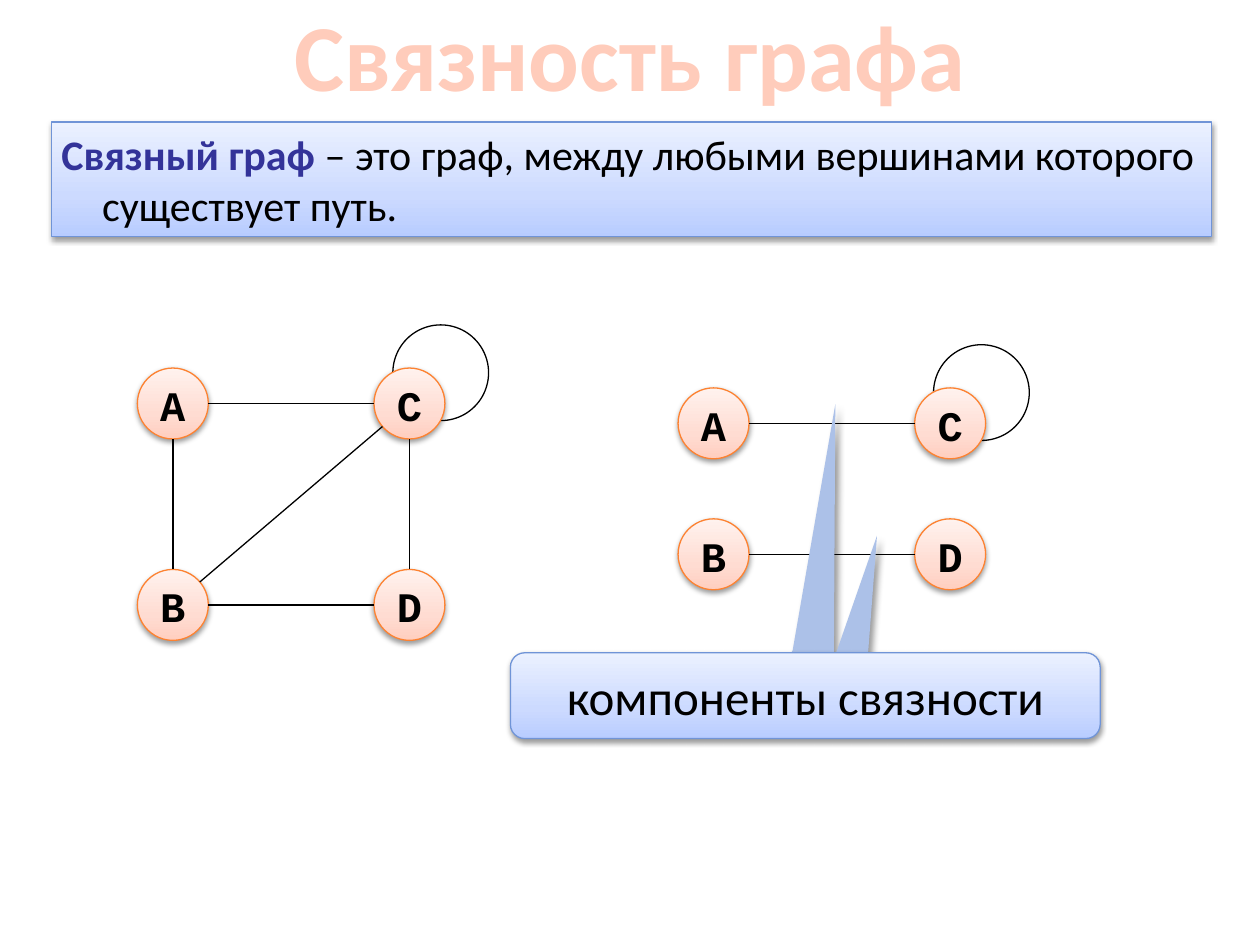
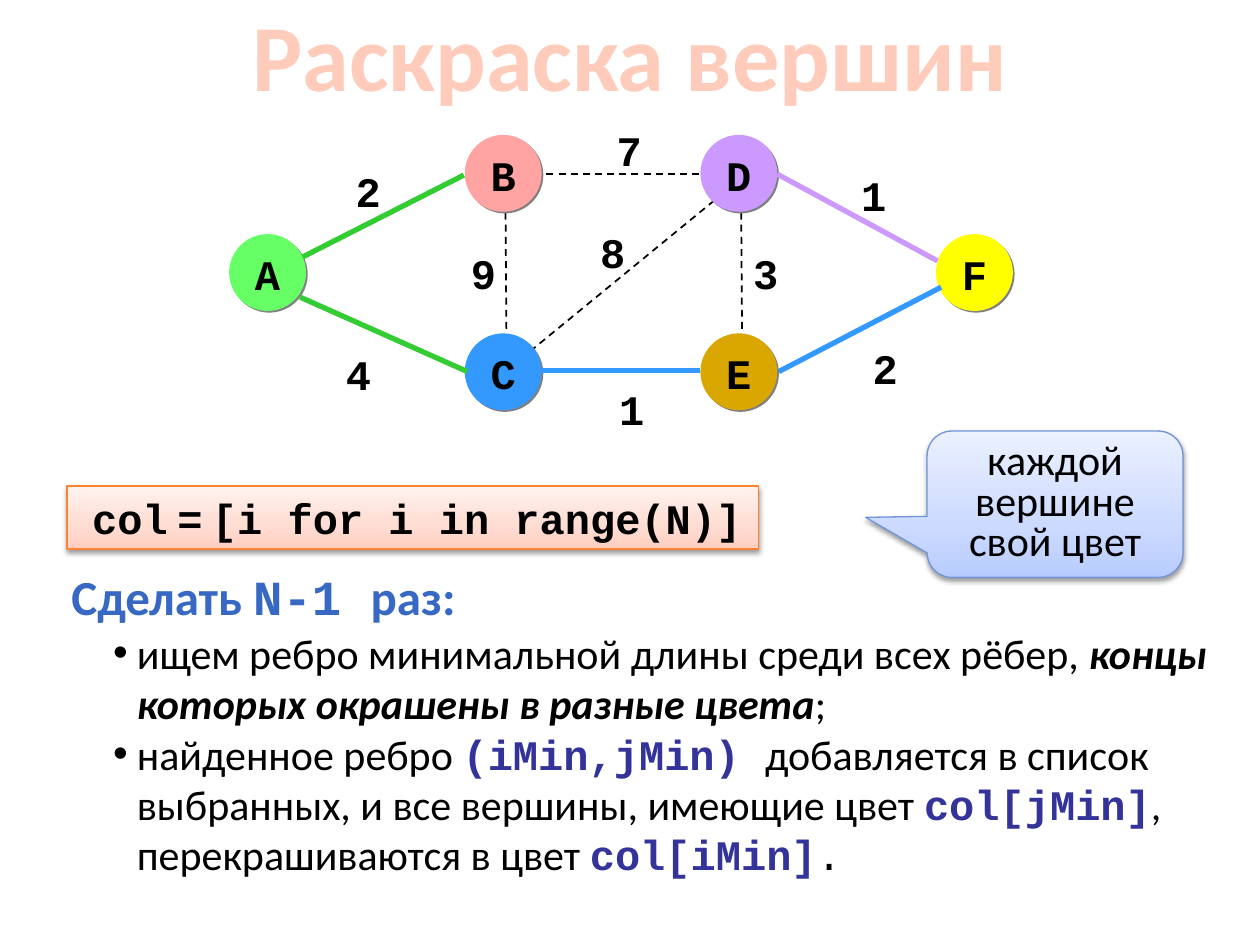
from copy import deepcopy
from math import hypot

from lxml import etree
from pptx import Presentation
from pptx.dml.color import RGBColor
from pptx.enum.dml import MSO_LINE
from pptx.enum.shapes import MSO_CONNECTOR, MSO_SHAPE
from pptx.enum.text import MSO_ANCHOR, PP_ALIGN
from pptx.oxml.ns import qn
from pptx.util import Cm, Pt

OVAL = MSO_SHAPE.OVAL
STRAIGHT = MSO_CONNECTOR.STRAIGHT
LEFT, CENTER = PP_ALIGN.LEFT, PP_ALIGN.CENTER
MIDDLE = MSO_ANCHOR.MIDDLE
DASH = MSO_LINE.DASH

COLORS = {
    "title": "FFCCBB", "black": "000000", "term": "333399", "heading": "3668C4",
    "orange": "FD8231", "blue": "7094D7", "pointer": "ACC1E8", "grey": "808080",
    "green": "33CC33", "violet": "CC99FF", "azure": "3399FF",
    "A": "66FF66", "B": "FFA3A3", "C": "3399FF",
    "D": "CC99FF", "E": "DAA600", "F": "FFFF00",
}
PEACH = ["FFCEBF", "FFDCD2", "FFF2EE"]
SKY = ["B8CCFF", "CCDAFF", "EBF1FF"]
SOFT = ("black", 38, 3.1, 1.6, 90)
POINTER_SHADOW = ("black", 40, 4, 3, 45)
HARD = ("grey", 100, 0, 1.4, 45)
SANS, MONO = "Calibri", "Courier New"


def decorate(item, fill=None, line=None, width=0.75, shadow=None):
    if isinstance(fill, list):
        item.fill.gradient()
        item.fill.gradient_angle = 90
        stops = item.element.spPr.find(".//" + qn("a:gsLst"))
        stops.insert(1, deepcopy(stops[0]))
        for stop, position, color in zip(item.fill.gradient_stops, (0, 0.35, 1), fill):
            stop.position = position
            stop.color.rgb = RGBColor.from_string(color)
    elif fill:
        item.fill.solid()
        item.fill.fore_color.rgb = RGBColor.from_string(COLORS[fill])
    elif hasattr(item, "fill"):
        item.fill.background()
    if line:
        item.line.color.rgb = RGBColor.from_string(COLORS[line])
        item.line.width = Pt(width)
    else:
        item.line.fill.background()
    effects = etree.SubElement(item.element.spPr, qn("a:effectLst"))
    if shadow:
        color, opacity, blur, distance, angle = shadow
        outer = etree.SubElement(
            effects, qn("a:outerShdw"), blurRad=str(Pt(blur)), dist=str(Pt(distance)),
            dir=str(angle * 60000), rotWithShape="0")
        tone = etree.SubElement(outer, qn("a:srgbClr"), val=COLORS[color])
        etree.SubElement(tone, qn("a:alpha"), val=str(opacity * 1000))


def write(paragraph, pieces, size, align=CENTER):
    paragraph.alignment = align
    for text, font, color, bold, italic in pieces:
        run = paragraph.add_run()
        run.text = text
        run.font.name = font
        run.font.size = Pt(size)
        run.font.bold = bold
        run.font.italic = italic
        run.font.color.rgb = RGBColor.from_string(COLORS[color])


deck = Presentation()
deck.slide_width, deck.slide_height = Cm(25.4), Cm(19.05)
slides = []
for heading in ("Связность графа", "Раскраска вершин"):
    slide = deck.slides.add_slide(deck.slide_layouts[6])
    title = slide.shapes.add_textbox(0, 0, Cm(25.4), Cm(2.16)).text_frame
    title.word_wrap = True
    title.vertical_anchor = MIDDLE
    write(title.paragraphs[0], [(heading, SANS, "title", True, False)], 54)
    slides.append(slide)
connectivity, coloring = (slide.shapes for slide in slides)

NODE, COLUMN_STEP = 1.43, 4.77
graphs = [
    (2.77, 7.42, 4.06, ["BD", "AB", "AC", "CD", "BC"]),
    (13.67, 7.82, 2.64, ["BD", "AC"]),
]
for left, top, row_step, edges in graphs:
    self_loop = connectivity.add_shape(
        OVAL, Cm(left + COLUMN_STEP + 0.38), Cm(top - 0.87), Cm(1.93), Cm(1.93))
    decorate(self_loop, line="black")
    centers = {}
    for index, letter in enumerate("ABCD"):
        x = left + index // 2 * COLUMN_STEP
        y = top + index % 2 * row_step
        centers[letter] = (x + NODE / 2, y + NODE / 2)
        vertex = connectivity.add_shape(OVAL, Cm(x), Cm(y), Cm(NODE), Cm(NODE))
        decorate(vertex, PEACH, "orange", shadow=SOFT)
        label = vertex.text_frame
        label.margin_left = label.margin_right = label.margin_bottom = 0
        label.margin_top = Cm(0.05)
        write(label.paragraphs[0], [(letter, MONO, "black", True, False)], 24)
    for start, end in edges:
        (x1, y1), (x2, y2) = centers[start], centers[end]
        share = NODE / 2 / hypot(x2 - x1, y2 - y1)
        dx, dy = (x2 - x1) * share, (y2 - y1) * share
        edge = connectivity.add_connector(
            STRAIGHT, Cm(x1 + dx), Cm(y1 + dy), Cm(x2 - dx), Cm(y2 - dy))
        decorate(edge, line="black")

pointers = [
    [(15.82, 13.41), (15.98, 13.11), (16.84, 8.15), (16.81, 13.41), (16.21, 13.51)],
    [(16.76, 13.44), (17.68, 10.8), (17.48, 13.44), (16.92, 13.46)],
]
for outline in pointers:
    points = [(Cm(x), Cm(y)) for x, y in outline]
    builder = connectivity.build_freeform(*points[0])
    builder.add_line_segments(points[1:])
    decorate(builder.convert_to_shape(), "pointer", shadow=POINTER_SHADOW)

components = connectivity.add_shape(
    MSO_SHAPE.ROUNDED_RECTANGLE, Cm(10.29), Cm(13.16), Cm(11.89), Cm(1.73))
decorate(components, SKY, "blue", shadow=SOFT)
write(components.text_frame.paragraphs[0],
      [("компоненты связности", SANS, "black", False, False)], 28)

definition = connectivity.add_shape(
    MSO_SHAPE.RECTANGLE, Cm(1.04), Cm(2.46), Cm(23.39), Cm(2.31))
decorate(definition, SKY, "blue", shadow=SOFT)
wording = definition.text_frame
wording.margin_left = wording.margin_right = 0
write(wording.paragraphs[0], [
    ("Связный граф ", SANS, "term", True, False),
    ("– это граф, между любыми вершинами которого существует путь.",
     SANS, "black", False, False),
], 24, LEFT)
properties = wording.paragraphs[0]._p.get_or_add_pPr()
properties.set("marL", str(Cm(1.02)))
properties.set("indent", str(Cm(-0.82)))

dashed_edges = [
    (10.77, 3.51, 14.4, 3.51), (14.94, 4.04, 14.96, 6.93),
    (10.31, 7.39, 14.4, 4.04), (10.19, 4.04, 10.21, 6.93),
]
for ends in dashed_edges:
    edge = coloring.add_connector(STRAIGHT, *map(Cm, ends))
    decorate(edge, line="black", width=1)
    edge.line.dash_style = DASH

weights = [
    ("4", 6.4, 6.76), ("2", 6.6, 3.07), ("1", 11.91, 7.47), ("2", 17.02, 6.63),
    ("9", 8.92, 4.72), ("7", 11.86, 2.24), ("8", 11.53, 4.29), ("1", 16.79, 3.15),
    ("3", 14.61, 4.72),
]
circles = [(weight, x, y, 1.65, None, None, 0) for weight, x, y in weights]
grid = [("A", 0, 1), ("B", 1, 0), ("C", 1, 2), ("D", 2, 0), ("E", 2, 2), ("F", 3, 1)]
circles += [(letter, 4.62 + 4.75 * column, 2.72 + 2 * row, 1.55, letter, HARD, 0.05)
            for letter, column, row in grid]
for text, x, y, width, fill, shadow, inset in circles:
    circle = coloring.add_shape(OVAL, Cm(x), Cm(y), Cm(width), Cm(1.55))
    decorate(circle, fill, shadow=shadow)
    label = circle.text_frame
    label.margin_left = label.margin_right = label.margin_bottom = 0
    label.margin_top = Cm(inset)
    write(label.paragraphs[0], [(text, MONO, "black", True, False)], 24)

chosen_edges = [
    ("azure", (10.92, 7.47, 14.12, 7.47)), ("violet", (15.67, 3.51, 18.9, 5.26)),
    ("green", (6.1, 5.18, 9.35, 3.53)), ("azure", (15.7, 7.49, 18.97, 5.79)),
    ("green", (6.05, 5.99, 9.42, 7.49)),
]
for color, ends in chosen_edges:
    edge = coloring.add_connector(STRAIGHT, *map(Cm, ends))
    decorate(edge, line=color, width=3)

steps = coloring.add_textbox(Cm(2.03), Cm(12.52), Cm(22.78), Cm(5.38)).text_frame
steps.word_wrap = True
step_pieces = [
    [("ищем ребро минимальной длины среди всех рёбер, ", SANS, "black", False, False),
     ("концы которых окрашены в разные цвета", SANS, "black", True, True),
     (";", SANS, "black", False, False)],
    [("найденное ребро ", SANS, "black", False, False),
     ("(iMin,jMin) ", MONO, "term", True, False),
     ("добавляется в список выбранных, и все вершины, имеющие цвет ",
      SANS, "black", False, False),
     ("col[jMin]", MONO, "term", True, False),
     (", перекрашиваются в цвет ", SANS, "black", False, False),
     ("col[iMin]", MONO, "term", True, False),
     (".", MONO, "black", False, False)],
]
for number, pieces in enumerate(step_pieces):
    step = steps.add_paragraph() if number else steps.paragraphs[0]
    write(step, pieces, 24, LEFT)
    properties = step._p.get_or_add_pPr()
    properties.set("marL", str(Cm(0.48)))
    properties.set("indent", str(Cm(-0.48)))
    etree.SubElement(properties, qn("a:buFont"), typeface="Arial")
    etree.SubElement(properties, qn("a:buChar"), char="•")

repeat = coloring.add_textbox(Cm(1.19), Cm(11.3), Cm(10), Cm(1.45)).text_frame
repeat.word_wrap = True
write(repeat.paragraphs[0], [
    ("Сделать ", SANS, "heading", True, False),
    ("N-1 ", MONO, "heading", True, False),
    ("раз:", SANS, "heading", True, False),
], 28, LEFT)

code = coloring.add_shape(MSO_SHAPE.RECTANGLE, Cm(1.35), Cm(9.8), Cm(13.94), Cm(1.27))
decorate(code, PEACH, "orange", shadow=SOFT)
code.text_frame.margin_left = Cm(0.51)
code.text_frame.margin_right = 0
write(code.text_frame.paragraphs[0], [
    ("col", MONO, "black", True, False), (" ", SANS, "black", True, False),
    ("=", MONO, "black", True, False), (" ", SANS, "black", True, False),
    ("[i for i in range(N)]", MONO, "black", True, False),
], 24, LEFT)

remark = coloring.add_shape(
    MSO_SHAPE.ROUNDED_RECTANGULAR_CALLOUT, Cm(18.69), Cm(8.69), Cm(5.16), Cm(2.95))
for index, value in enumerate((-0.74, 0.09, 0.17)):
    remark.adjustments[index] = value
decorate(remark, SKY, "blue", shadow=SOFT)
remark_line = remark.text_frame.paragraphs[0]
remark_line.line_spacing = 0.8
write(remark_line, [("каждой вершине свой цвет", SANS, "black", False, False)], 24)

deck.save("out.pptx")
